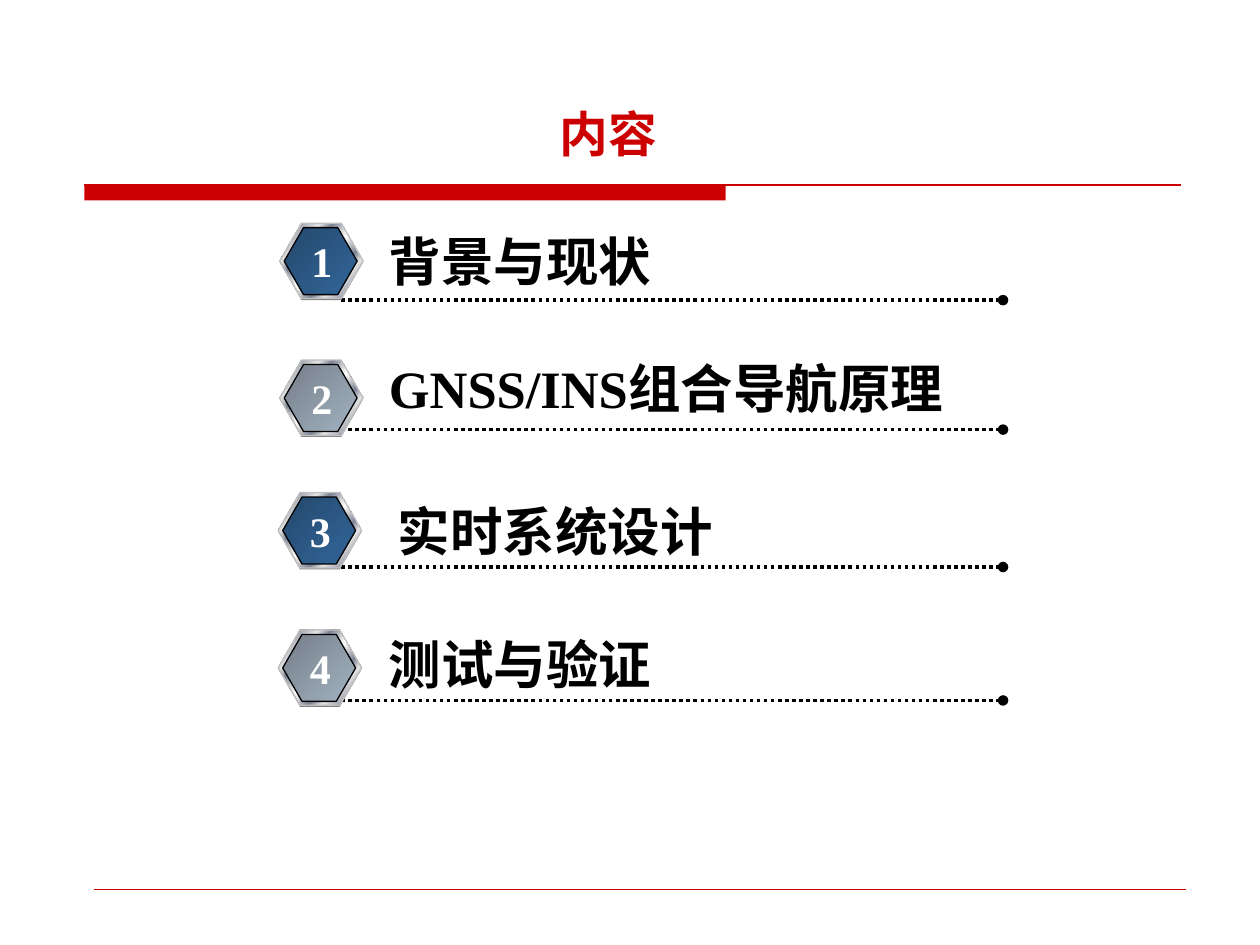
from lxml.etree import SubElement
from pptx import Presentation
from pptx.dml.color import RGBColor
from pptx.enum.dml import MSO_LINE_DASH_STYLE as Dash
from pptx.enum.shapes import MSO_CONNECTOR as Connector, MSO_SHAPE as Shape
from pptx.enum.text import MSO_ANCHOR as Anchor, MSO_AUTO_SIZE as AutoSize, PP_ALIGN as Align
from pptx.oxml.ns import qn
from pptx.util import Cm, Pt

COLORS = {"red": "CC0000", "black": "000000", "white": "FFFFFF", "shade": "808080", "rim": "C0C0C0"}
LATIN, CJK = "Times New Roman", "Noto Sans CJK SC"
LIGHT, STEEL = "E6E6E6", "7D8496"
METAL = [(0, LIGHT), (8, STEEL), (26, LIGHT), (34, STEEL), (46, LIGHT), (50, "FFFFFF"),
         (54, LIGHT), (66, STEEL), (74, LIGHT), (92, STEEL), (100, LIGHT)]
FACES = [[(0, "24496D"), (100, "336699")], [(0, "757F8A"), (100, "A3B2C1")]]

TITLE = "内容"
# text, text left, text top, badge left, badge top, rule height
ITEMS = [
    ("背景与现状", 7.59, 4.5, 5.64, 4.5, 6.05),
    ("GNSS/INS组合导航原理", 7.59, 7.06, 5.64, 7.26, 8.66),
    ("实时系统设计", 7.77, 9.93, 5.61, 9.93, 11.43),
    ("测试与验证", 7.59, 12.62, 5.61, 12.7, 14.12),
]


def rgb(name):
    return RGBColor.from_string(COLORS[name])


def write(frame, text, size, color, font=LATIN, align=Align.LEFT):
    para = frame.paragraphs[0]
    para.alignment = align
    span = para.add_run()
    span.text = text
    span.font.size, span.font.bold, span.font.name = Pt(size), True, font
    span.font.color.rgb = rgb(color)
    SubElement(span.font._element, qn("a:ea"), typeface=CJK)


def add_text(shapes, left, top, width, height, text, size, color, wrap=True, align=Align.LEFT):
    box = shapes.add_textbox(Cm(left), Cm(top), Cm(width), Cm(height))
    box.text_frame.word_wrap = wrap
    box.text_frame.auto_size = AutoSize.SHAPE_TO_FIT_TEXT
    write(box.text_frame, text, size, color, align=align)


def add_rule(shapes, left, right, top, color, width):
    rule = shapes.add_connector(Connector.STRAIGHT, Cm(left), Cm(top), Cm(right), Cm(top))
    rule.line.color.rgb, rule.line.width = rgb(color), Pt(width)
    SubElement(rule._element.spPr, qn("a:effectLst"))
    return rule


def add_hexagon(shapes, left, top, width, height, stops=None, outline=None):
    hexagon = shapes.add_shape(Shape.HEXAGON, Cm(left), Cm(top), Cm(width), Cm(height))
    hexagon.shadow.inherit = False
    hexagon.adjustments[0], hexagon.adjustments[1] = 0.289, 1.155
    if stops:
        hexagon.fill.gradient()
        hexagon.fill.gradient_angle = 315
        stop_list = hexagon._element.spPr.find(".//" + qn("a:gsLst"))
        stop_list.clear()
        for percent, color in stops:
            stop = SubElement(stop_list, qn("a:gs"), pos=str(percent * 1000))
            SubElement(stop, qn("a:srgbClr"), val=color)
    else:
        hexagon.fill.solid()
        hexagon.fill.fore_color.rgb = rgb("shade")
    if outline:
        hexagon.line.color.rgb, hexagon.line.width = rgb(outline), Pt(0.75)
    else:
        hexagon.line.fill.background()


def add_badge(page, number, left, top):
    shapes = page.shapes.add_group_shape().shapes
    add_hexagon(shapes, left, top + 0.03, 1.68, 1.52)
    add_hexagon(shapes, left, top, 1.68, 1.52, METAL, "rim")
    add_hexagon(shapes, left + 0.09, top + 0.09, 1.47, 1.35, FACES[(number - 1) % 2], "black")
    add_text(shapes, left + 0.38, top + 0.13, 0.94, 1.27, str(number), 24, "white", False, Align.CENTER)


def main():
    """Build the contents slide with four numbered entries."""
    deck = Presentation()
    deck.slide_width, deck.slide_height = Cm(25.4), Cm(19.05)
    page = deck.slides.add_slide(deck.slide_layouts[5])

    bar = page.shapes.add_shape(Shape.RECTANGLE, Cm(1.7), Cm(3.73), Cm(12.93), Cm(0.31))
    bar.shadow.inherit = False
    bar.fill.solid()
    bar.fill.fore_color.rgb = rgb("red")
    bar.line.fill.background()
    add_rule(page.shapes, 1.7, 23.8, 3.73, "red", 0.75)
    add_rule(page.shapes, 1.9, 23.9, 17.93, "red", 0.25)

    title = page.shapes.title
    title.left, title.top, title.width, title.height = Cm(-0.48), Cm(1.83), Cm(25.5), Cm(1.57)
    title.text_frame.auto_size = AutoSize.NONE
    title.text_frame.vertical_anchor = Anchor.BOTTOM
    write(title.text_frame, TITLE, 27.8, "red", CJK, Align.CENTER)

    for number, (text, left, top, badge_left, badge_top, rule_top) in enumerate(ITEMS, 1):
        rule = add_rule(page.shapes, 6.88, 20.22, rule_top, "black", 2)
        rule.line.dash_style = Dash.ROUND_DOT
        SubElement(rule.line._ln, qn("a:tailEnd"), type="oval")
        add_badge(page, number, badge_left, badge_top)
        add_text(page.shapes, left, top, 11.94, 1.55, text, 30, "black")

    deck.save("out.pptx")


if __name__ == "__main__":
    main()
